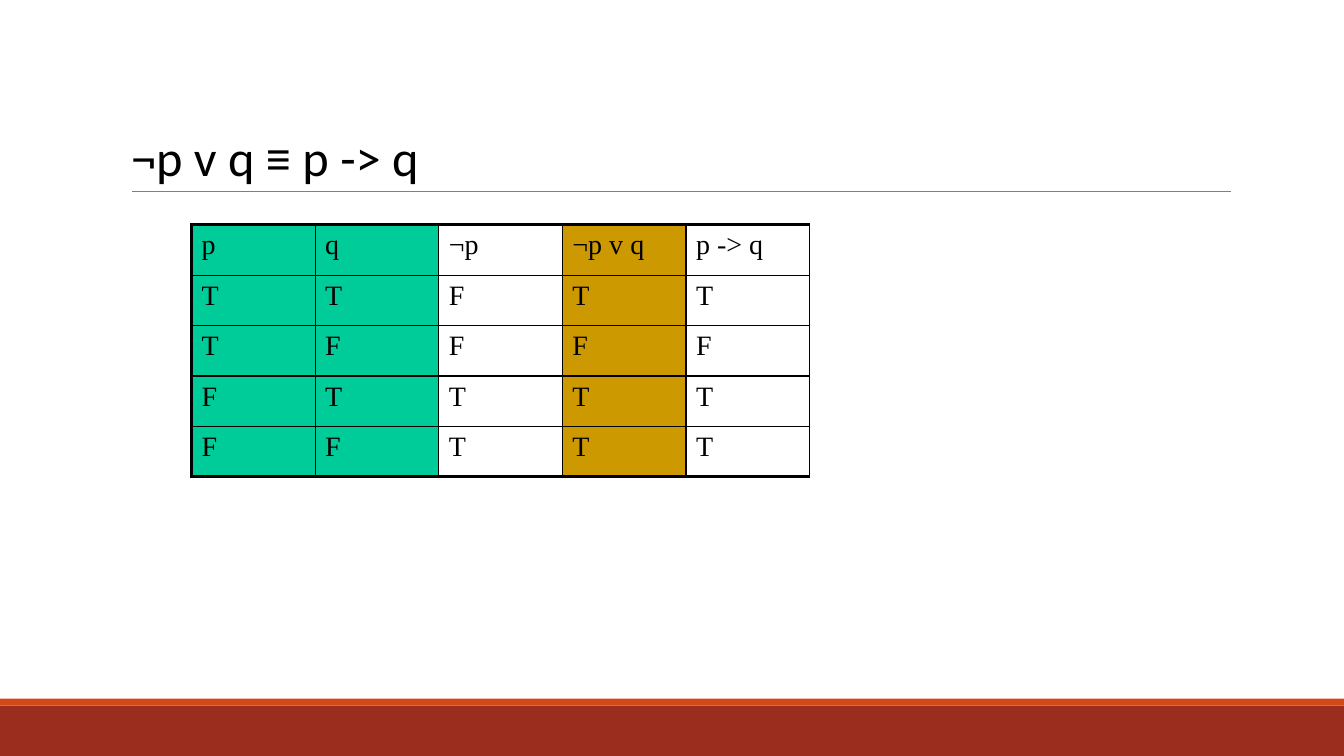
"""Build a slide with the truth table showing that ¬p v q is equivalent to p -> q."""
from dataclasses import dataclass

from lxml import etree
from pptx import Presentation
from pptx.dml.color import RGBColor
from pptx.enum import shapes, text
from pptx.oxml import ns
from pptx.util import Pt


@dataclass(frozen=True)
class Theme:
    ink: str = "000000"
    rule: str = "808080"
    band: str = "9B2D1F"
    accent: str = "D34817"
    inputs: str = "00CC99"
    result: str = "CC9900"
    title_font: str = "Calibri"
    table_font: str = "Times New Roman"
    title_size: int = 36
    table_size: int = 20


theme = Theme()


def style_font(font, name, size):
    font.name, font.size = name, Pt(size)
    font.color.rgb = RGBColor.from_string(theme.ink)


def add_border(cell, side, width):
    line = etree.SubElement(cell._tc.get_or_add_tcPr(), ns.qn(f"a:ln{side}"), w=str(Pt(width)))
    fill = etree.SubElement(line, ns.qn("a:solidFill"))
    etree.SubElement(fill, ns.qn("a:srgbClr"), val=theme.ink)


deck = Presentation()
deck.slide_width, deck.slide_height = Pt(960), Pt(540)
slide = deck.slides.add_slide(deck.slide_layouts[5])

for top, height, color in ((504, 36, theme.band), (499, 5, theme.accent)):
    footer = slide.shapes.add_shape(shapes.MSO_SHAPE.RECTANGLE, 0, Pt(top), deck.slide_width, Pt(height))
    footer.shadow.inherit = False
    footer.fill.solid()
    footer.fill.fore_color.rgb = RGBColor.from_string(color)
    footer.line.fill.background()

title_rule = slide.shapes.add_connector(shapes.MSO_CONNECTOR.STRAIGHT, Pt(94.4), Pt(136.8), Pt(879), Pt(136.8))
title_rule.line.color.rgb = RGBColor.from_string(theme.rule)
title_rule.line.width = Pt(0.5)
etree.SubElement(title_rule._element.spPr, ns.qn("a:effectLst"))

title = slide.shapes.title
title.left, title.top, title.width, title.height = Pt(86.4), Pt(22.5), Pt(792), Pt(114.2)
title.text_frame.text = "¬p v q ≡ p -> q"
title.text_frame.vertical_anchor = text.MSO_ANCHOR.BOTTOM
heading = title.text_frame.paragraphs[0]
heading.alignment = text.PP_ALIGN.LEFT
heading.line_spacing = 0.85
style_font(heading.font, theme.title_font, theme.title_size)

truth_rows = (
    ("p", "q", "¬p", "¬p v q", "p -> q"),
    ("T", "T", "F", "T", "T"),
    ("T", "F", "F", "F", "F"),
    ("F", "T", "T", "T", "T"),
    ("F", "F", "T", "T", "T"),
)
column_fills = (theme.inputs, theme.inputs, None, theme.result, None)
last_row = len(truth_rows) - 1

truth_table = slide.shapes.add_table(
    len(truth_rows), len(column_fills), Pt(136.8), Pt(160.6), Pt(441.5), Pt(180)
).table
truth_table.first_row = truth_table.horz_banding = False

for r, values in enumerate(truth_rows):
    for c, (value, fill_color) in enumerate(zip(values, column_fills)):
        cell = truth_table.cell(r, c)
        cell.text = value
        style_font(cell.text_frame.paragraphs[0].font, theme.table_font, theme.table_size)
        for side, is_outer in (("L", c == 0), ("R", False), ("T", r == 0), ("B", r == last_row)):
            add_border(cell, side, 2.25 if is_outer else 1)
        if fill_color:
            cell.fill.solid()
            cell.fill.fore_color.rgb = RGBColor.from_string(fill_color)
        else:
            cell.fill.background()

deck.save("out.pptx")
